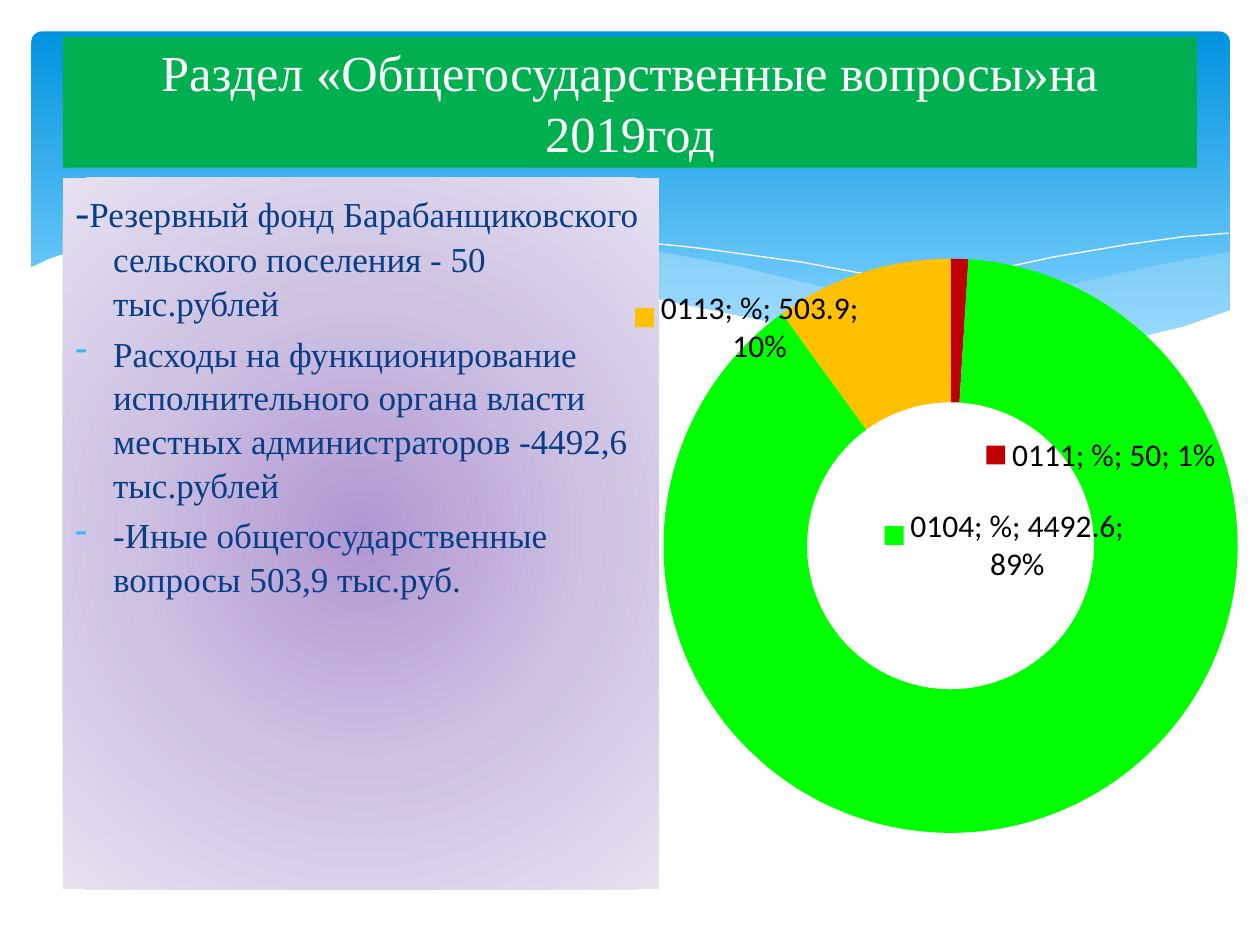
from lxml.etree import SubElement
from pptx import Presentation
from pptx.chart.data import CategoryChartData
from pptx.dml.color import RGBColor
from pptx.enum.chart import XL_CHART_TYPE as ChartType
from pptx.enum.shapes import MSO_SHAPE as Preset
from pptx.enum.text import MSO_ANCHOR as Anchor, PP_ALIGN as Align
from pptx.oxml import parse_xml
from pptx.oxml.ns import nsdecls, qn
from pptx.util import Inches, Pt

COLORS = {
    "sky_top": "0293E0", "sky_bottom": "83D3FE", "wave": "C6E7FC", "white": "FFFFFF",
    "lilac_core": "B197D2", "lilac_mid": "CEC1E2", "lilac_edge": "E7E1F0",
    "title_band": "00B050", "text": "073E87", "bullet": "31B6FD", "black": "000000",
    "reserve": "C00000", "administration": "00FF00", "other": "FFC000",
}
COLUMNS, ROWS = 100, 75  # one grid cell is a tenth of an inch
SERIF, SANS = "Times New Roman", "Calibri"

RIGHT_WAVE = [(97.5, 20), (92.1, 21), (86.1, 22.3), (80.5, 23.7), (75.3, 24.8), (70.6, 25.7),
              (66.1, 26.5), (70.5, 27.1), (75.7, 27.6), (80.3, 27.8), (85.4, 27.6),
              (89.7, 27), (93.5, 26.2), (97.6, 24.7), (97.6, 20)]
LONG_WAVE = [(89.3, 27.3), (83.7, 26.5), (77.5, 25.4), (70.6, 24), (62.9, 22.2), (58.4, 21.1),
             (54.1, 20.3), (48.9, 19.4), (44.2, 18.9), (38, 18.5), (32.8, 18.7), (28.6, 19.1),
             (34.2, 19.9), (40.4, 21.1), (49.1, 23.2), (56.6, 24.8), (63.4, 26.1), (69.5, 27),
             (74.8, 27.6), (79.6, 27.8), (84.8, 27.7), (89.3, 27.3)]
LONG_CREST = [(30.9, 19.5), (34.4, 19), (38.7, 18.7), (43.3, 18.7), (48.9, 19), (55.6, 19.7),
              (63.6, 20.8), (69.5, 21.9), (76, 23.3), (83.1, 25.1), (90.7, 27.2)]
RIGHT_CREST = [(61.3, 25.7), (67.2, 24.1), (74.8, 22.3), (83.6, 20.4), (89.5, 19.4),
               (93.8, 18.8), (97.5, 18.5)]
WHITE_HILL = [(97.7, 24.6), (94, 25.9), (89.9, 26.9), (86.3, 27.4), (82.3, 27.7), (77.8, 27.6),
              (72.6, 27.2), (66.8, 26.5), (60.3, 25.4), (52.9, 23.9), (44.7, 22), (39.1, 20.7),
              (34, 19.7), (29.2, 19), (25, 18.6), (21.1, 18.4), (16.1, 18.4), (11.9, 18.7),
              (8.5, 19.3), (5.9, 19.9), (4, 20.5), (2.3, 21.3), (2.3, 32.9), (97.7, 32.9)]


def rgb(name):
    return RGBColor.from_string(COLORS[name])


def write(para, text, size, color="text", font=SERIF):
    span = para.add_run()
    span.text = text
    span.font.size, span.font.name = Pt(size), font
    span.font.color.rgb = rgb(color)


def paint_gradient(shape, stops, shade):
    """Fill with (percent, colour) stops; shade is the XML of a:lin or a:path."""
    shape.fill.solid()
    solid = shape.fill._xPr.find(qn("a:solidFill"))
    marks = "".join(f'<a:gs pos="{percent * 1000}"><a:srgbClr val="{COLORS[name]}"/></a:gs>'
                    for percent, name in stops)
    solid.getparent().replace(solid, parse_xml(
        f'<a:gradFill {nsdecls("a")} rotWithShape="1"><a:gsLst>{marks}</a:gsLst>{shade}</a:gradFill>'))


def layout_xml(x, y, size=None):
    """Manual chart layout; with a size it places the inner plot area."""
    target = '<c:layoutTarget val="inner"/><c:xMode val="edge"/><c:yMode val="edge"/>' if size else ""
    extent = f'<c:w val="{size[0]}"/><c:h val="{size[1]}"/>' if size else ""
    return (f'<c:layout {nsdecls("c")}><c:manualLayout>{target}<c:x val="{x}"/><c:y val="{y}"/>'
            f'{extent}</c:manualLayout></c:layout>')


class SlideBuilder:
    def __init__(self, deck):
        self.page = deck.slides.add_slide(deck.slide_layouts[6])
        self.cell_x, self.cell_y = deck.slide_width / COLUMNS, deck.slide_height / ROWS

    def place(self, column, row):
        return round(column * self.cell_x), round(row * self.cell_y)

    def box(self, column, row, width, height, preset=Preset.RECTANGLE, color=None):
        shape = self.page.shapes.add_shape(
            preset, *self.place(column, row), *self.place(width, height))
        shape.shadow.inherit = False
        shape.line.fill.background()
        if color:
            shape.fill.solid()
            shape.fill.fore_color.rgb = rgb(color)
        shape.text_frame.word_wrap = True
        return shape

    def outline(self, points, closed=True):
        start, *rest = [self.place(*point) for point in points]
        builder = self.page.shapes.build_freeform(*start)
        builder.add_line_segments(rest, close=closed)
        shape = builder.convert_to_shape()
        shape.shadow.inherit = False
        return shape

    def wave(self, points, color, opacity=100):
        shape = self.outline(points)
        shape.line.fill.background()
        shape.fill.solid()
        shape.fill.fore_color.rgb = rgb(color)
        if opacity < 100:
            tint = shape.fill._xPr.find(qn("a:solidFill"))[0]
            SubElement(tint, qn("a:alpha"), val=str(opacity * 1000))

    def crest(self, points):
        shape = self.outline(points, closed=False)
        shape.fill.background()
        shape.line.color.rgb = rgb("white")
        shape.line.width = Pt(0)

    def item(self, para, spans, bullet=None):
        para.alignment = Align.LEFT
        para.space_before, para.line_spacing = Pt(4), 1.04
        props = para._p.get_or_add_pPr()
        props.set("marL", str(Inches(0.3)))
        props.set("indent", str(-Inches(0.3)))
        if bullet:
            tint = SubElement(props, qn("a:buClr"))
            SubElement(tint, qn("a:srgbClr"), val=COLORS["bullet"])
            SubElement(props, qn("a:buChar"), char=bullet)
        for text, size in spans:
            write(para, text, size)

    def doughnut(self, column, row, width, height, name, slices):
        """Each slice is category, value, colour and label offset."""
        data = CategoryChartData()
        data.categories = [part[0] for part in slices]
        data.add_series(name, [part[1] for part in slices])
        chart = self.page.shapes.add_chart(
            ChartType.DOUGHNUT, *self.place(column, row), *self.place(width, height), data).chart
        chart.has_legend = chart.has_title = False
        chart.font.size, chart.font.name = Pt(18), SANS
        chart.font.color.rgb = rgb("black")
        area = chart._chartSpace.chart.plotArea
        for old in area.findall(qn("c:layout")):
            area.remove(old)
        area.insert(0, parse_xml(layout_xml(0.01, 0.09, (0.99, 0.83))))
        chart.plots[0].vary_by_categories = True
        series = chart.plots[0].series[0]
        labels = series.data_labels
        labels.show_legend_key = labels.show_value = labels.show_percentage = True
        labels.show_category_name = labels.show_series_name = True
        flags = "".join(f'<c:show{flag} val="1"/>'
                        for flag in ("LegendKey", "Val", "CatName", "SerName", "Percent"))
        for index, (_, _, color, offset) in enumerate(slices):
            fill = series.points[index].format.fill
            fill.solid()
            fill.fore_color.rgb = rgb(color)
            labels._element.insert(index, parse_xml(
                f'<c:dLbl {nsdecls("c")}><c:idx val="{index}"/>{layout_xml(*offset)}{flags}'
                '<c:showBubbleSize val="0"/><c:separator>; </c:separator></c:dLbl>'))


def main():
    deck = Presentation()
    deck.slide_width, deck.slide_height = Inches(10), Inches(7.5)
    slide = SlideBuilder(deck)

    sky = slide.box(2.5, 2.5, 95.1, 27, Preset.ROUNDED_RECTANGLE)
    sky.adjustments[0] = 0.03
    paint_gradient(sky, [(0, "sky_top"), (90, "sky_bottom")], '<a:lin ang="5400000" scaled="0"/>')
    slide.wave(RIGHT_WAVE, "wave", 29)
    slide.wave(LONG_WAVE, "wave", 40)
    slide.crest(LONG_CREST)
    slide.crest(RIGHT_CREST)
    slide.wave(WHITE_HILL, "white")

    panel = slide.box(5, 14.1, 47.3, 56.5)
    paint_gradient(panel, [(0, "lilac_core"), (50, "lilac_mid"), (100, "lilac_edge")],
                   '<a:path path="circle"><a:fillToRect l="50000" t="50000" r="50000" b="50000"/></a:path>')
    frame = panel.text_frame
    frame.vertical_anchor = Anchor.TOP
    slide.item(frame.paragraphs[0], [
        ("-", 24), ("Резервный фонд Барабанщиковского сельского поселения - 50 тыс.рублей", 20)])
    for text in ("Расходы на функционирование исполнительного органа власти "
                 "местных администраторов -4492,6 тыс.рублей",
                 "-Иные общегосударственные вопросы 503,9 тыс.руб."):
        slide.item(frame.add_paragraph(), [(text, 20)], bullet="-")

    title = slide.box(5, 2.9, 90, 10.4, color="title_band").text_frame
    title.vertical_anchor = Anchor.MIDDLE
    title.paragraphs[0].alignment = Align.CENTER
    write(title.paragraphs[0], "Раздел «Общегосударственные вопросы»на 2019год", 28.8, "white")

    slide.doughnut(50.4, 15.6, 49.6, 54.9, "%", [
        ("0111", 50, "reserve", (0.23, 0.18)),
        ("0104", 4492.6, "administration", (-0.01, -0.3)),
        ("0113", 503.9, "other", (-0.22, -0.02))])
    deck.save("out.pptx")


if __name__ == "__main__":
    main()
